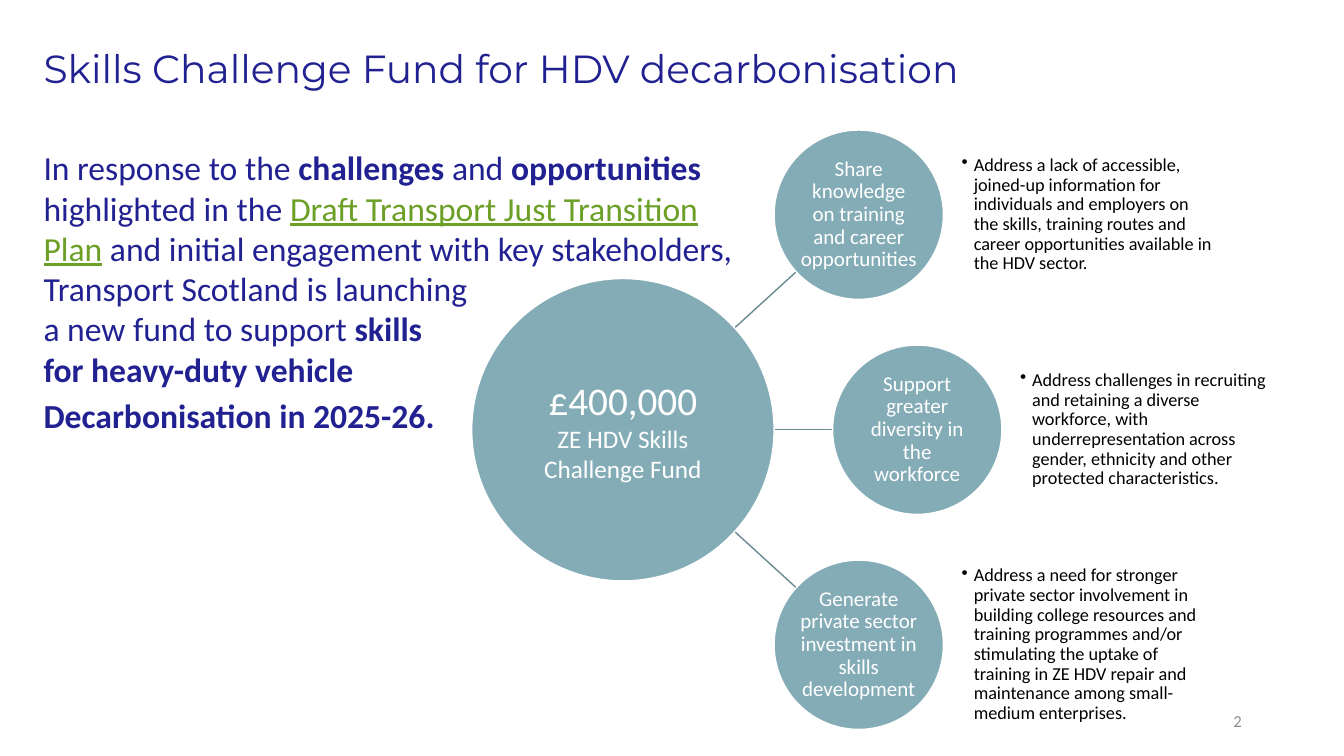
import math
from dataclasses import dataclass

from lxml import etree
from pptx import Presentation
from pptx import util as u
from pptx.dml.color import RGBColor
from pptx.enum import shapes, text
from pptx.oxml.ns import qn

COLUMNS, ROWS = 40, 22.5


@dataclass(frozen=True)
class Theme:
    navy: str = "212192"
    link: str = "6B9F25"
    teal: str = "84ACB6"
    spoke: str = "6A8A92"
    white: str = "FFFFFF"
    black: str = "000000"
    grey: str = "8C8C8C"
    heading_font: str = "Montserrat"
    body_font: str = "Calibri"
    heading: int = 28
    body: int = 24
    fund: int = 18
    goal: int = 15
    note: int = 13
    number: int = 12


class Board:
    """Holds the theme and slide; all lengths are grid columns and rows."""

    def __init__(self, deck, theme):
        self.theme = theme
        self.slide = deck.slides.add_slide(deck.slide_layouts[6])
        self.column = deck.slide_width / COLUMNS
        self.row = deck.slide_height / ROWS

    def place(self, x, y):
        return round(x * self.column), round(y * self.row)

    def frame(self, shape, inset, anchor):
        frame = shape.text_frame
        frame.word_wrap = True
        frame.vertical_anchor = anchor
        frame.margin_left = frame.margin_right = u.Inches(inset)
        frame.margin_top = frame.margin_bottom = u.Inches(min(inset, 0.05))
        return frame

    def style(self, paragraph, size, color, font=None, align=text.PP_ALIGN.LEFT, spacing=1.0):
        paragraph.alignment = align
        paragraph.line_spacing = spacing
        paragraph.font.size = u.Pt(size)
        paragraph.font.name = font or self.theme.body_font
        paragraph.font.color.rgb = RGBColor.from_string(color)

    def textbox(self, x, y, width, height, inset=0.1, anchor=text.MSO_ANCHOR.MIDDLE):
        box = self.slide.shapes.add_textbox(*self.place(x, y), *self.place(width, height))
        return self.frame(box, inset, anchor)

    def line(self, x, y, width, height, words, size, color, **look):
        paragraph = self.textbox(x, y, width, height).paragraphs[0]
        paragraph.text = words
        self.style(paragraph, size, color, **look)

    def rich_text(self, x, y, width, height, paragraphs):
        """Each paragraph is a list of (words, mark); mark is "", "bold" or "link"."""
        frame = self.textbox(x, y, width, height, anchor=text.MSO_ANCHOR.TOP)
        for index, pieces in enumerate(paragraphs):
            paragraph = frame.paragraphs[0] if index == 0 else frame.add_paragraph()
            self.style(paragraph, self.theme.body, self.theme.navy)
            for words, mark in pieces:
                run = paragraph.add_run()
                run.text = words
                if mark == "bold":
                    run.font.bold = True
                elif mark == "link":
                    run.font.underline = True
                    run.font.color.rgb = RGBColor.from_string(self.theme.link)
        paragraph.space_before = u.Pt(4)

    def circle(self, center, diameter, lines, inset, spacing):
        """Each line is a pair of words and type size."""
        x, y = (c - diameter / 2 for c in center)
        disc = self.slide.shapes.add_shape(
            shapes.MSO_SHAPE.OVAL, *self.place(x, y), *self.place(diameter, diameter))
        disc.shadow.inherit = False
        disc.fill.solid()
        disc.fill.fore_color.rgb = RGBColor.from_string(self.theme.teal)
        disc.line.color.rgb = RGBColor.from_string(self.theme.white)
        disc.line.width = u.Pt(1)
        frame = self.frame(disc, inset, text.MSO_ANCHOR.MIDDLE)
        for index, (words, size) in enumerate(lines):
            paragraph = frame.paragraphs[0] if index == 0 else frame.add_paragraph()
            paragraph.text = words
            self.style(paragraph, size, self.theme.white,
                       align=text.PP_ALIGN.CENTER, spacing=spacing)

    def spoke(self, start, start_radius, end, end_radius):
        """Joins the rims of two circles along the line between their centres."""
        dx, dy = end[0] - start[0], end[1] - start[1]
        length = math.hypot(dx, dy)
        ux, uy = dx / length, dy / length
        link = self.slide.shapes.add_connector(
            shapes.MSO_CONNECTOR.STRAIGHT,
            *self.place(start[0] + ux * start_radius, start[1] + uy * start_radius),
            *self.place(end[0] - ux * end_radius, end[1] - uy * end_radius))
        link.line.color.rgb = RGBColor.from_string(self.theme.spoke)
        link.line.width = u.Pt(1)
        etree.SubElement(link._element.spPr, qn("a:effectLst"))

    def bullet(self, x, y, width, height, words):
        paragraph = self.textbox(x, y, width, height, inset=0).paragraphs[0]
        paragraph.text = words
        properties = paragraph._p.get_or_add_pPr()
        indent = u.Inches(0.12)
        properties.set("marL", str(indent))
        properties.set("indent", str(-indent))
        etree.SubElement(properties, qn("a:buChar")).set("char", "•")
        self.style(paragraph, self.theme.note, self.theme.black, spacing=0.9)


INTRO = [
    [("In response to the ", ""), ("challenges ", "bold"), ("and ", ""),
     ("opportunities ", "bold"), ("highlighted in the ", ""),
     ("Draft Transport Just Transition Plan", "link"),
     (" and initial engagement with key stakeholders,", "")],
    [("Transport Scotland is launching", "")],
    [("a new fund to support ", ""), ("skills", "bold")],
    [("for heavy-duty vehicle", "bold")],
    [("Decarbonisation in 2025-26.", "bold")],
]

# Column of the circle's centre, goal, explanation
GOALS = [
    (25.56, "Share knowledge on training and career opportunities",
     "Address a lack of accessible, joined-up information for individuals and employers on "
     "the skills, training routes and career opportunities available in the HDV sector."),
    (27.3, "Support greater diversity in the workforce",
     "Address challenges in recruiting and retaining a diverse workforce, with "
     "underrepresentation across gender, ethnicity and other protected characteristics."),
    (25.56, "Generate private sector investment in skills development",
     "Address a need for stronger private sector involvement in building college resources "
     "and training programmes and/or stimulating the uptake of training in ZE HDV repair and "
     "maintenance among small-medium enterprises."),
]


def main():
    theme = Theme()
    deck = Presentation()
    deck.slide_width, deck.slide_height = u.Inches(13.33), u.Inches(7.5)
    board = Board(deck, theme)

    # Title and introduction
    board.line(1, 0.42, 34.5, 3.4, "Skills Challenge Fund for HDV decarbonisation",
               theme.heading, theme.navy, font=theme.heading_font, spacing=0.9)
    board.rich_text(1, 4.23, 21.8, 14.67, INTRO)

    # Fund at the hub, goals around it
    hub, hub_size = (18.54, 12.79), 9
    goal_size, goal_step = 5.04, 6.4
    for index, (column, goal, note) in enumerate(GOALS):
        center = (column, hub[1] + (index - 1) * goal_step)
        board.spoke(hub, hub_size / 2, center, goal_size / 2)
        board.circle(center, goal_size, [(goal, theme.goal)], inset=0.01, spacing=0.9)
        board.bullet(column + 3.06, center[1] - goal_size / 2, 7.56, goal_size, note)
    board.circle(hub, hub_size, [("£400,000", theme.heading),
                                 ("ZE HDV Skills Challenge Fund", theme.fund)],
                 inset=0.17, spacing=1.0)

    # Slide number
    board.line(28.26, 20.85, 9, 1.2, "2", theme.number, theme.grey, align=text.PP_ALIGN.RIGHT)

    deck.save("out.pptx")


if __name__ == "__main__":
    main()
